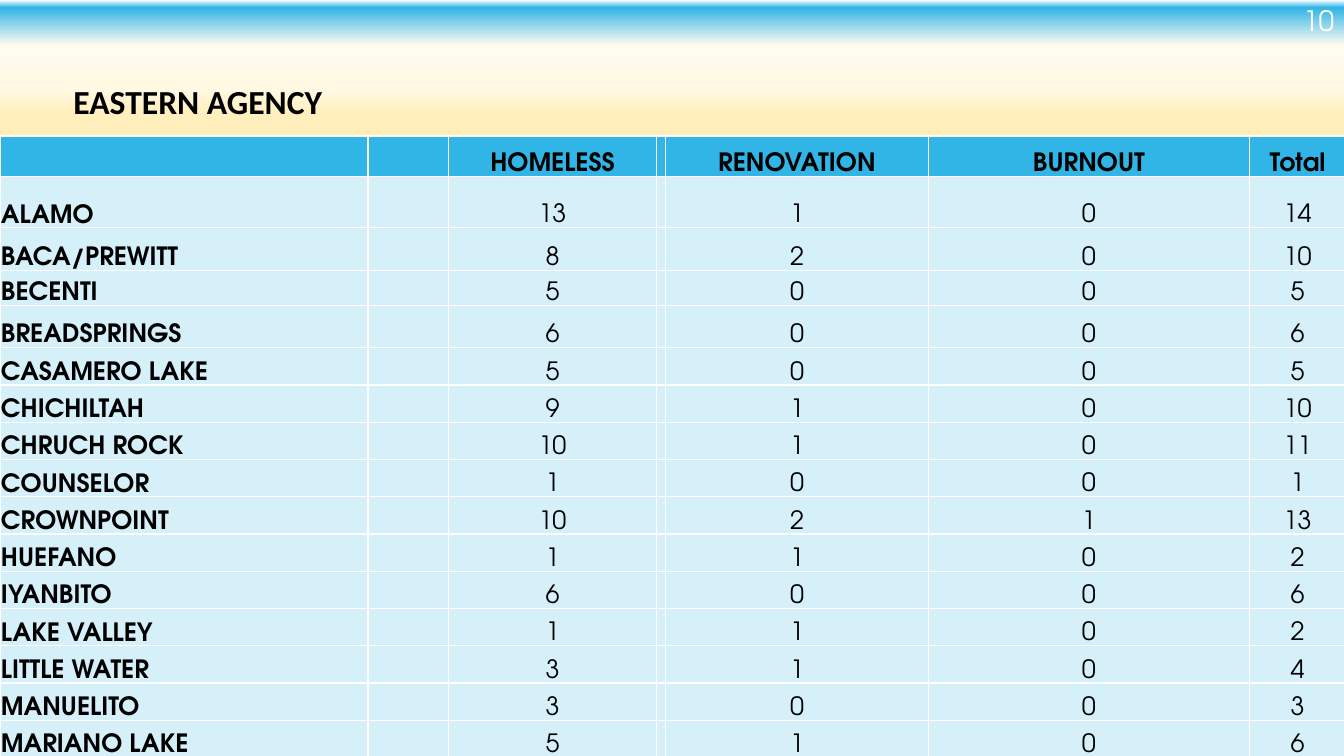
from lxml import etree
from pptx import Presentation
from pptx import util as u
from pptx.dml.color import RGBColor
from pptx.enum import text
from pptx.oxml.ns import qn

PX = 9144
HEADING_FONT = "Calibri"
BODY_FONT = "TeX Gyre Adventor"
COLORS = {
    "header": "31B4E6",
    "row": "D6F0FA",
    "border": "FFFFFF",
    "ink": "000000",
    "number": "FEFFFF",
}
SKY = [(0, "FFFFFF"), (1, "31B4E6"), (6, "FFFCF1"), (12, "FFF8E2"), (15, "FFEFBC"),
       (35, "FFE9A5"), (50, "FFE081"), (65, "FFD65B"), (84, "FFCA29"), (93, "595959")]
COLUMN_WIDTHS = [365, 80, 206, 9, 261, 318, 96]
ROW_HEIGHTS = [40, 51, 42, 35, 42] + [37] * 11
HEADINGS = ["", "HOMELESS", "RENOVATION", "BURNOUT", "Total"]
CHAPTERS = [
    ("ALAMO", 13, 1, 0, 14),
    ("BACA/PREWITT", 8, 2, 0, 10),
    ("BECENTI", 5, 0, 0, 5),
    ("BREADSPRINGS", 6, 0, 0, 6),
    ("CASAMERO LAKE", 5, 0, 0, 5),
    ("CHICHILTAH", 9, 1, 0, 10),
    ("CHRUCH ROCK", 10, 1, 0, 11),
    ("COUNSELOR", 1, 0, 0, 1),
    ("CROWNPOINT", 10, 2, 1, 13),
    ("HUEFANO", 1, 1, 0, 2),
    ("IYANBITO", 6, 0, 0, 6),
    ("LAKE VALLEY", 1, 1, 0, 2),
    ("LITTLE WATER", 3, 1, 0, 4),
    ("MANUELITO", 3, 0, 0, 3),
    ("MARIANO LAKE", 5, 1, 0, 6),
]


def style(para, font, size, color, bold, align):
    para.font.name = font
    para.font.size = u.Pt(size)
    para.font.bold = bold
    para.font.color.rgb = RGBColor.from_string(COLORS[color])
    para.alignment = align


def add_label(page, words, left, top, width, height):
    box = page.shapes.add_textbox(left * PX, top * PX, width * PX, height * PX)
    box.text_frame.word_wrap = True
    box.text_frame.text = words
    return box.text_frame


deck = Presentation()
deck.slide_width = 1333 * PX
deck.slide_height = 750 * PX
page = deck.slides.add_slide(deck.slide_layouts[6])

backdrop = page.background.fill
backdrop.gradient()
backdrop.gradient_angle = 270
stops = page._element.find(".//" + qn("a:gsLst"))
for stop in list(stops):
    stops.remove(stop)
for percent, color in SKY:
    stop = etree.SubElement(stops, qn("a:gs"), pos=str(percent * 1000))
    etree.SubElement(stop, qn("a:srgbClr"), val=color)

table = page.shapes.add_table(
    len(ROW_HEIGHTS), len(COLUMN_WIDTHS), 0, 135 * PX,
    sum(COLUMN_WIDTHS) * PX, sum(ROW_HEIGHTS) * PX).table
for column, width in zip(table.columns, COLUMN_WIDTHS):
    column.width = width * PX
for row, height in zip(table.rows, ROW_HEIGHTS):
    row.height = height * PX

for r, (name, homeless, renovation, burnout, total) in enumerate([HEADINGS] + CHAPTERS):
    for c, value in enumerate([name, "", homeless, "", renovation, burnout, total]):
        cell = table.cell(r, c)
        cell.text = str(value)
        cell.vertical_anchor = text.MSO_ANCHOR.BOTTOM
        cell.margin_left = cell.margin_right = cell.margin_top = PX
        cell.margin_bottom = 0
        style(cell.text_frame.paragraphs[0], BODY_FONT, 18, "ink", r == 0 or c == 0,
              text.PP_ALIGN.CENTER if c else text.PP_ALIGN.LEFT)
        for side in ("a:lnL", "a:lnR", "a:lnT", "a:lnB"):
            line = etree.SubElement(cell._tc.tcPr, qn(side), w=str(u.Pt(1)))
            paint = etree.SubElement(line, qn("a:solidFill"))
            etree.SubElement(paint, qn("a:srgbClr"), val=COLORS["border"])
        cell.fill.solid()
        cell.fill.fore_color.rgb = RGBColor.from_string(COLORS["row" if r else "header"])

heading = add_label(page, "EASTERN AGENCY", 63, 75, 616, 50)
heading.auto_size = text.MSO_AUTO_SIZE.SHAPE_TO_FIT_TEXT
style(heading.paragraphs[0], HEADING_FONT, 24, "ink", True, text.PP_ALIGN.LEFT)

number = add_label(page, "10", 1248, 0, 85, 40)
number.vertical_anchor = text.MSO_ANCHOR.MIDDLE
style(number.paragraphs[0], BODY_FONT, 20, "number", False, text.PP_ALIGN.RIGHT)

deck.save("out.pptx")
